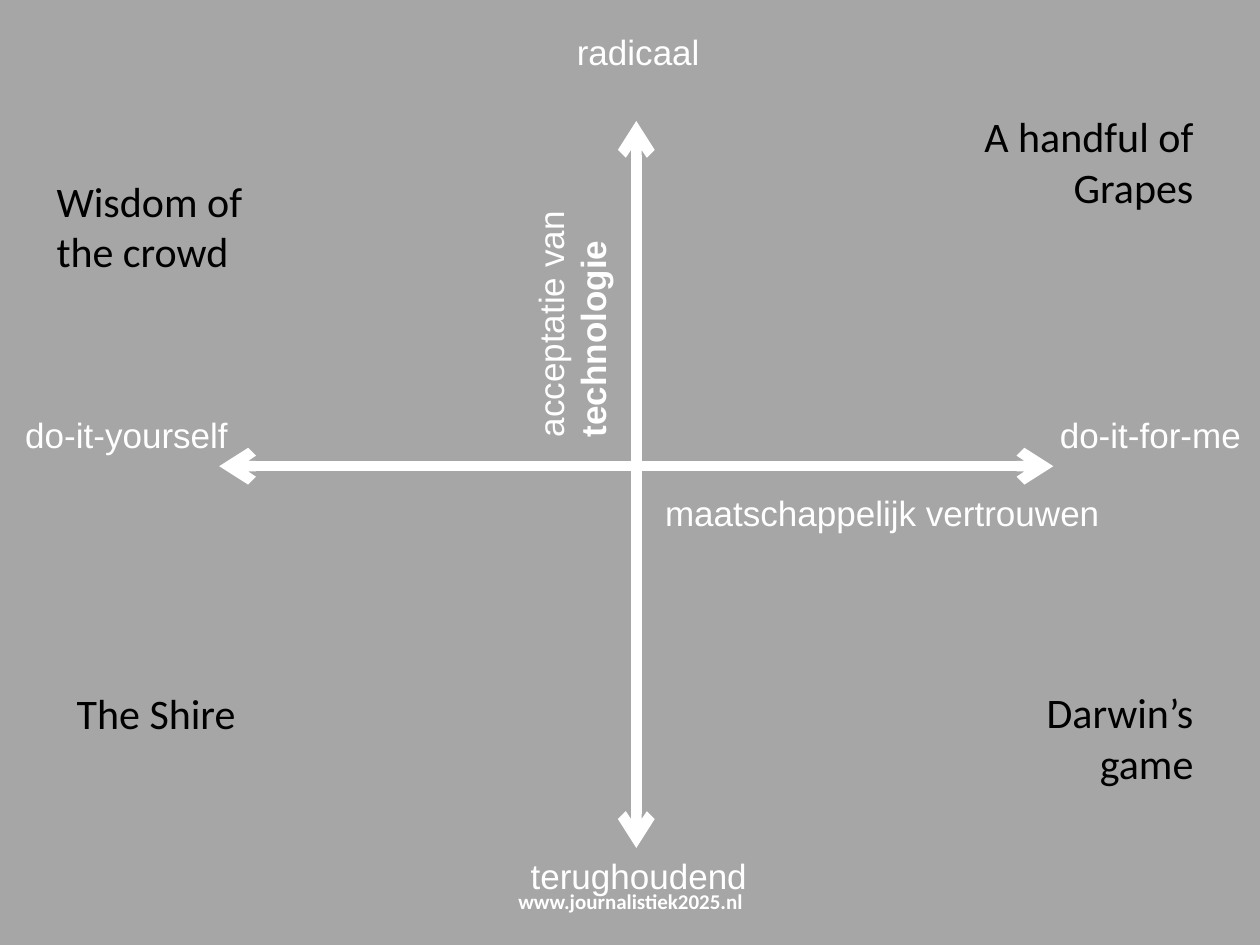
import pptx
import pptx.util
import pptx.dml.color
import pptx.enum.shapes
import pptx.enum.text
from lxml import etree

COLORS = {"back": "A6A6A6", "axis": "FFFFFF", "scenario": "000000"}
COLS, ROWS = 100, 75  # square grid cells over the slide

# Axes: from column, row to column, row
AXES = [(50.5, 67.3, 50.5, 9.6), (17.4, 37, 83.6, 37)]

# Text styles: font, size, colour, bold
STYLES = {
    "axis": ("Arial", 20, "axis", False),
    "scenario": ("Calibri", 24, "scenario", False),
    "footer": ("Calibri", 12, "axis", True),
}

# Labels: text, style, alignment, column, row, columns wide, rows high
LABELS = [
    ("maatschappelijk vertrouwen", "axis", "LEFT", 51.8, 38.5, 46, 4.4),
    ("do-it-for-me", "axis", "CENTER", 79.2, 32.3, 24.2, 4.4),
    ("do-it-yourself", "axis", "CENTER", -2.8, 32.3, 25.7, 4.4),
    ("radicaal", "axis", "CENTER", 39.2, 1.9, 22.9, 4.4),
    ("terughoudend", "axis", "CENTER", 39.3, 67.3, 22.8, 4.4),
    ("Wisdom of the crowd", "scenario", "LEFT", 3.5, 13.4, 20.5, 9.1),
    ("Darwin’s game", "scenario", "RIGHT", 75.2, 54, 20.5, 9.1),
    ("A handful of Grapes", "scenario", "RIGHT", 75.2, 8.3, 20.5, 9.1),
    ("The Shire", "scenario", "LEFT", 5.1, 54.1, 20.5, 5),
    ("www.journalistiek2025.nl", "footer", "CENTER", 34.2, 69.5, 31.7, 4),
]
TECHNOLOGY = ("acceptatie van ", "axis", "LEFT", 31.6, 18.1, 27.5, 7.7)
TECHNOLOGY_BOLD = "technologie"

prs = pptx.Presentation()
prs.slide_width = pptx.util.Inches(10)
prs.slide_height = pptx.util.Inches(7.5)
s = prs.slides.add_slide(prs.slide_layouts[6])


def rgb(name):
    return pptx.dml.color.RGBColor.from_string(COLORS[name])


def x(cols):
    return round(prs.slide_width * cols / COLS)


def y(rows):
    return round(prs.slide_height * rows / ROWS)


def format_run(r, style, bold=False):
    font, size, color, style_bold = STYLES[style]
    r.font.name = font
    r.font.size = pptx.util.Pt(size)
    r.font.bold = bold or style_bold
    r.font.color.rgb = rgb(color)


def add_axis(x1, y1, x2, y2):
    line = s.shapes.add_connector(
        pptx.enum.shapes.MSO_CONNECTOR.STRAIGHT, x(x1), y(y1), x(x2), y(y2))
    line.line.color.rgb = rgb("axis")
    line.line.width = pptx.util.Pt(6)
    ln = line.line._get_or_add_ln()
    for end in ("a:headEnd", "a:tailEnd"):
        etree.SubElement(ln, pptx.oxml.ns.qn(end), type="arrow")
    etree.SubElement(line._element.spPr, pptx.oxml.ns.qn("a:effectLst"))


def add_label(text, style, align, col, row, width, height):
    sp = s.shapes.add_textbox(x(col), y(row), x(width), y(height))
    tf = sp.text_frame
    tf.word_wrap = True
    tf.text = text
    p = tf.paragraphs[0]
    p.alignment = getattr(pptx.enum.text.PP_ALIGN, align)
    format_run(p.runs[0], style)
    if style == "footer":
        tf.vertical_anchor = pptx.enum.text.MSO_ANCHOR.MIDDLE
    return sp


# Background and axes
s.background.fill.solid()
s.background.fill.fore_color.rgb = rgb("back")
for axis in AXES:
    add_axis(*axis)

# Vertical axis title, read upwards
sp = add_label(*TECHNOLOGY)
sp.rotation = 270
r = sp.text_frame.paragraphs[0].add_run()
r.text = TECHNOLOGY_BOLD
format_run(r, "axis", bold=True)

# Axis ends, scenarios and footer
for label in LABELS:
    add_label(*label)

prs.save("out.pptx")
